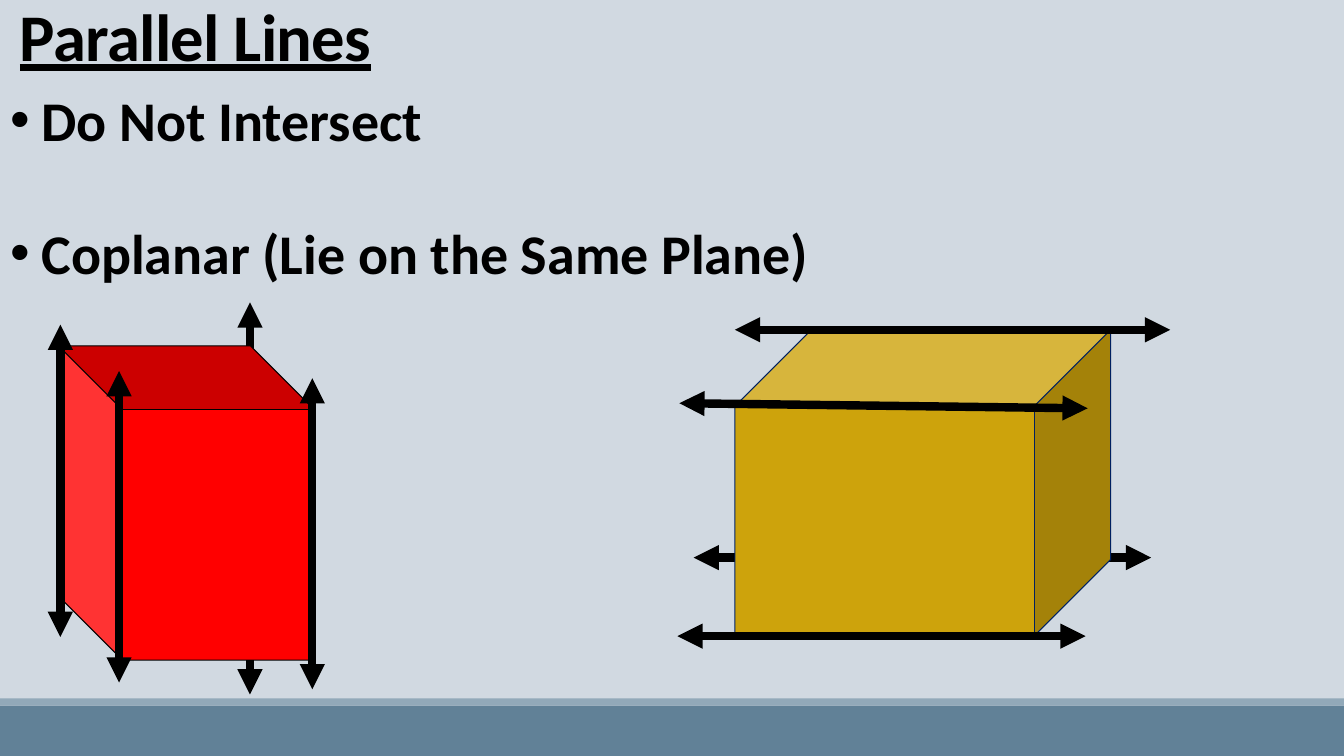
import lxml.etree
import pptx
import pptx.dml.color
import pptx.enum.shapes
import pptx.enum.text
import pptx.oxml.ns
import pptx.util
from dataclasses import dataclass

Cm, Pt = pptx.util.Cm, pptx.util.Pt
Shapes = pptx.enum.shapes.MSO_SHAPE
qn = pptx.oxml.ns.qn


@dataclass
class Theme:
    background: str = "D1D9E1"
    band: str = "618197"
    band_edge: str = "92A9B9"
    ink: str = "000000"
    red: str = "FF0000"
    gold: str = "CDA30C"
    navy: str = "002060"
    font: str = "Calibri"
    title_size: float = 47.6
    body_size: float = 40
    arrow_width: float = 6
    outline_width: float = 0.75


def rgb(color):
    return pptx.dml.color.RGBColor.from_string(color)


def set_all(target, values):
    for name, value in values.items():
        setattr(target, name, value)


class SlideBuilder:
    def __init__(self, page, theme):
        self.page, self.theme = page, theme
        page.background.fill.solid()
        page.background.fill.fore_color.rgb = rgb(theme.background)

    def place(self, box, left, top, width, height):
        set_all(box, dict(left=Cm(left), top=Cm(top), width=Cm(width), height=Cm(height)))

    def add_span(self, para, text, size, **extra):
        span = para.add_run()
        span.text = text
        set_all(span.font, dict(name=self.theme.font, size=Pt(size), bold=True, **extra))
        span.font.color.rgb = rgb(self.theme.ink)
        return span

    def title(self, text, *bounds):
        box = self.page.shapes.title
        self.place(box, *bounds)
        set_all(box.text_frame, dict(
            vertical_anchor=pptx.enum.text.MSO_ANCHOR.BOTTOM,
            auto_size=pptx.enum.text.MSO_AUTO_SIZE.NONE))
        para = box.text_frame.paragraphs[0]
        set_all(para, dict(alignment=pptx.enum.text.PP_ALIGN.LEFT, line_spacing=0.85))
        span = self.add_span(para, text, self.theme.title_size, underline=True)
        span.font._element.set("spc", "-50")

    def bullets(self, lines, gap, *bounds):
        box = self.page.placeholders[1]
        self.place(box, *bounds)
        frame = box.text_frame
        frame.auto_size = pptx.enum.text.MSO_AUTO_SIZE.NONE
        for index, line in enumerate(lines):
            para = frame.add_paragraph() if index else frame.paragraphs[0]
            para.space_before = Pt(gap if index else 0)
            indent = Cm(0.79)
            properties = para._p.get_or_add_pPr()
            properties.set("marL", str(indent))
            properties.set("indent", str(-indent))
            self.add_span(para, line, self.theme.body_size)

    def shape(self, kind, fill, *bounds, outline=None, rotation=0):
        box = self.page.shapes.add_shape(kind, 0, 0, 0, 0)
        self.place(box, *bounds)
        box.rotation = rotation
        box.shadow.inherit = False
        box.fill.solid()
        box.fill.fore_color.rgb = rgb(fill)
        if outline:
            box.line.color.rgb = rgb(outline)
            box.line.width = Pt(self.theme.outline_width)
        else:
            box.line.fill.background()

    def double_arrow(self, x1, y1, x2, y2):
        arrow = self.page.shapes.add_connector(
            pptx.enum.shapes.MSO_CONNECTOR.STRAIGHT, Cm(x1), Cm(y1), Cm(x2), Cm(y2))
        arrow.line.color.rgb = rgb(self.theme.ink)
        arrow.line.width = Pt(self.theme.arrow_width)
        outline = arrow.line._get_or_add_ln()
        for end in ("a:headEnd", "a:tailEnd"):
            lxml.etree.SubElement(outline, qn(end), type="triangle")
        lxml.etree.SubElement(arrow._element.spPr, qn("a:effectLst"))


def main():
    theme = Theme()
    deck = pptx.Presentation()
    set_all(deck, dict(slide_width=Cm(33.87), slide_height=Cm(19.05)))
    builder = SlideBuilder(deck.slides.add_slide(deck.slide_layouts[1]), theme)

    # Footer bands
    builder.shape(Shapes.RECTANGLE, theme.band, 0, 17.78, 33.87, 1.27)
    builder.shape(Shapes.RECTANGLE, theme.band_edge, 0, 17.6, 33.87, 0.18)

    # Title and list
    builder.title("Parallel Lines", 0.25, 0.33, 9.55, 1.68)
    builder.bullets(["Do Not Intersect", "Coplanar (Lie on the Same Plane)"],
                    47, 0, 2.03, 25.76, 5.38)

    # Red cube: one vertical line behind it, three along its edges
    builder.double_arrow(6.3, 17.5, 6.3, 7.62)
    builder.shape(Shapes.CUBE, theme.red, 0.74, 9.45, 7.92, 6.45,
                  outline=theme.ink, rotation=270)
    for x, bottom, top in [(1.52, 16.05, 8.18), (3, 17.2, 9.35), (7.87, 17.37, 9.53)]:
        builder.double_arrow(x, bottom, x, top)

    # Gold cube: one horizontal line behind it, three along its edges
    builder.double_arrow(17.48, 14.05, 29.01, 14.05)
    builder.shape(Shapes.CUBE, theme.gold, 18.52, 8.31, 9.47, 7.72, outline=theme.navy)
    for ends in [(18.52, 8.31, 29.49, 8.31), (27.41, 10.29, 17.12, 10.16),
                 (17.07, 16.03, 27.36, 16.03)]:
        builder.double_arrow(*ends)

    deck.save("out.pptx")


if __name__ == "__main__":
    main()
